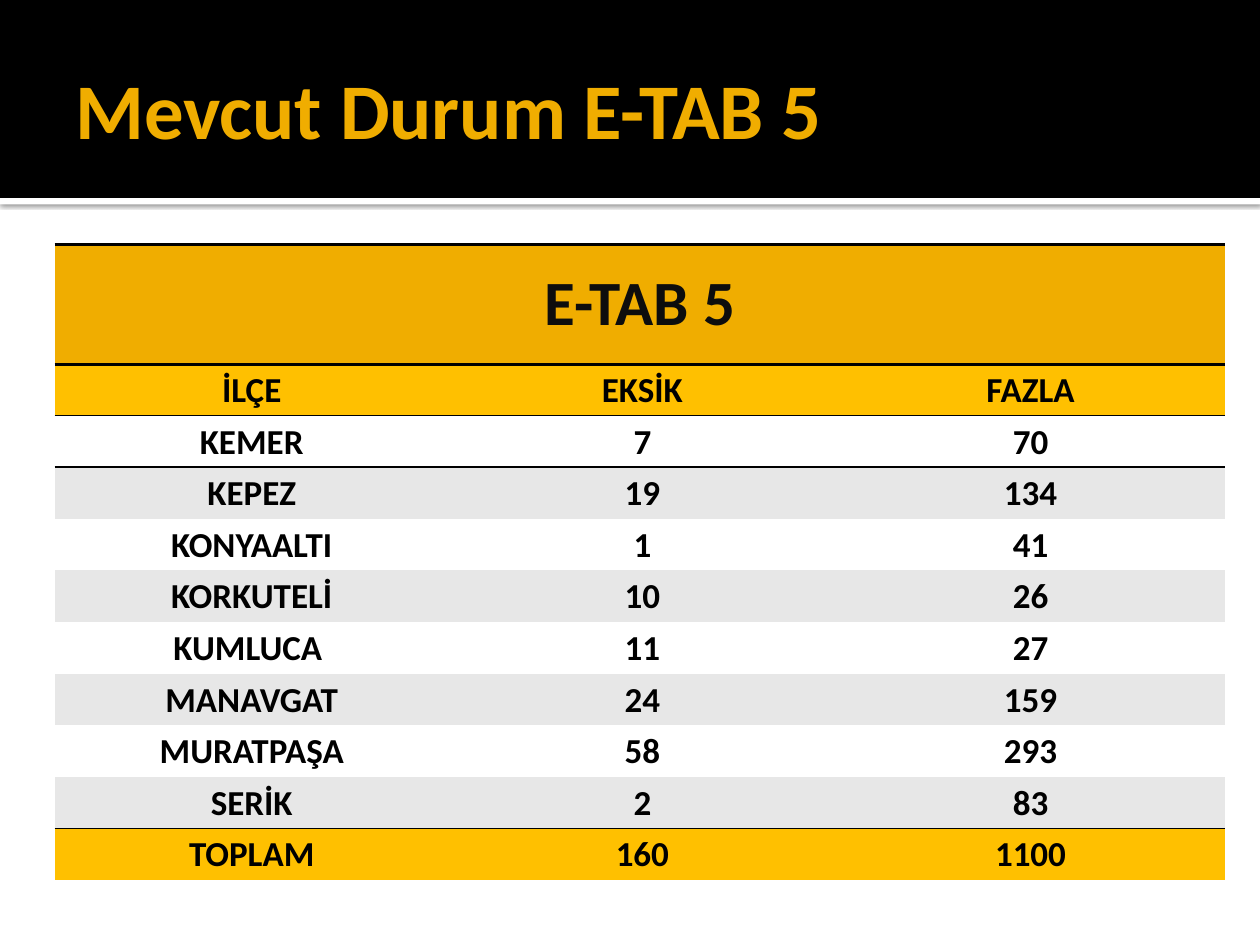
from dataclasses import dataclass

from lxml import etree
from pptx import Presentation
from pptx.dml.color import RGBColor
from pptx.enum import shapes, text
from pptx.oxml import ns
from pptx.util import Cm, Pt


@dataclass(frozen=True)
class Theme:
    font: str = "Calibri"
    black: str = "000000"
    white: str = "FFFFFF"
    gold: str = "F0AD00"
    amber: str = "FFC000"
    grey: str = "E7E7E7"
    caption_ink: str = "0D0D0D"
    title_size: int = 45
    caption_size: int = 36
    body_size: int = 20


THEME = Theme()
PLAIN_TABLE = "{2D5ABB26-0587-4C30-8999-92F81FD0307C}"
COLUMN_WIDTHS = (7.95, 7.8, 7.85)
CAPTION_HEIGHT, ROW_HEIGHT = 2.41, 1.04
HEADER = ("İLÇE", "EKSİK", "FAZLA")
DISTRICTS = [
    ("KEMER", 7, 70),
    ("KEPEZ", 19, 134),
    ("KONYAALTI", 1, 41),
    ("KORKUTELİ", 10, 26),
    ("KUMLUCA ", 11, 27),
    ("MANAVGAT", 24, 159),
    ("MURATPAŞA", 58, 293),
    ("SERİK", 2, 83),
]
TOTAL = ("TOPLAM", 160, 1100)


def set_attributes(target, values):
    for name, value in values.items():
        setattr(target, name, value)


def add_element(parent, tag, **attributes):
    values = {name: str(value) for name, value in attributes.items()}
    return etree.SubElement(parent, ns.qn(tag), values)


def write_text(tf, words, size, color, align):
    p = tf.paragraphs[0]
    p.alignment = align
    r = p.add_run()
    r.text = str(words)
    set_attributes(r.font, {"name": THEME.font, "size": Pt(size), "bold": True})
    r.font.color.rgb = RGBColor.from_string(color)


def add_band(s, order, top, height, color):
    """Add a full-width band behind the title."""
    sp = s.shapes.add_shape(shapes.MSO_SHAPE.RECTANGLE, 0, Cm(top), Cm(25.4), Cm(height))
    sp.shadow.inherit = False
    sp.fill.solid()
    sp.fill.fore_color.rgb = RGBColor.from_string(color)
    sp.line.fill.background()
    s.shapes._spTree.insert(2 + order, sp._element)
    return sp


def add_shadow(sp):
    effects = sp._element.spPr.find(ns.qn("a:effectLst"))
    shadow = add_element(effects, "a:outerShdw", blurRad=Pt(2.5), dist=Pt(0.8),
                         dir=90 * 60000, algn="t", rotWithShape=0)
    color = add_element(shadow, "a:srgbClr", val=THEME.black)
    add_element(color, "a:alpha", val=60000)


def format_title(s, words):
    sp = s.shapes.title
    set_attributes(sp, {"left": Cm(1.27), "top": Cm(0.43),
                        "width": Cm(22.86), "height": Cm(3.48)})
    tf = sp.text_frame
    set_attributes(tf, {
        "margin_left": Cm(0.25), "margin_right": Cm(0.13),
        "margin_top": Cm(0.13), "margin_bottom": Cm(0.13),
        "vertical_anchor": text.MSO_ANCHOR.MIDDLE,
        "auto_size": text.MSO_AUTO_SIZE.NONE, "word_wrap": True,
    })
    write_text(tf, words, THEME.title_size, THEME.gold, text.PP_ALIGN.LEFT)


def add_border(cell, side, width):
    line = add_element(cell._tc.get_or_add_tcPr(), f"a:ln{side}", w=Pt(width))
    fill = add_element(line, "a:solidFill")
    add_element(fill, "a:srgbClr", val=THEME.black)


def format_cell(cell, fill, borders):
    """Draw borders ({side: points}, top before bottom), then the fill."""
    for side, width in borders.items():
        add_border(cell, side, width)
    cell.fill.solid()
    cell.fill.fore_color.rgb = RGBColor.from_string(fill)
    cell.vertical_anchor = text.MSO_ANCHOR.MIDDLE


def fill_row(table, index, values, fill, borders):
    for column, value in enumerate(values):
        cell = table.cell(index, column)
        format_cell(cell, fill, borders)
        set_attributes(cell, {"margin_left": Cm(0.03), "margin_right": Cm(0.03),
                              "margin_top": Cm(0.03), "margin_bottom": 0})
        write_text(cell.text_frame, value, THEME.body_size, THEME.black,
                   text.PP_ALIGN.CENTER)


def fill_caption(table, words):
    for cell in table.rows[0].cells:
        format_cell(cell, THEME.gold, {"T": 2, "B": 2})
    caption = table.cell(0, 0)
    caption.merge(table.cell(0, len(HEADER) - 1))
    write_text(caption.text_frame, words, THEME.caption_size, THEME.caption_ink,
               text.PP_ALIGN.CENTER)


def add_district_table(s):
    row_count = len(DISTRICTS) + 3
    height = CAPTION_HEIGHT + ROW_HEIGHT * (row_count - 1)
    table = s.shapes.add_table(row_count, len(HEADER), Cm(1.1), Cm(4.93),
                               Cm(sum(COLUMN_WIDTHS)), Cm(height)).table
    set_attributes(table, {"first_row": False, "horz_banding": False})
    table._tbl.tblPr.find(ns.qn("a:tableStyleId")).text = PLAIN_TABLE
    for column, width in zip(table.columns, COLUMN_WIDTHS):
        column.width = Cm(width)
    for index, row in enumerate(table.rows):
        row.height = Cm(ROW_HEIGHT if index else CAPTION_HEIGHT)

    fill_caption(table, "E-TAB 5")
    fill_row(table, 1, HEADER, THEME.amber, {"T": 2, "B": 1})
    borders = {0: {"T": 1, "B": 1.5}, len(DISTRICTS) - 1: {"B": 1}}
    for index, district in enumerate(DISTRICTS):
        fill = THEME.grey if index % 2 else THEME.white
        fill_row(table, index + 2, district, fill, borders.get(index, {}))
    fill_row(table, row_count - 1, TOTAL, THEME.amber, {"T": 1})


def main():
    prs = Presentation()
    set_attributes(prs, {"slide_width": Cm(25.4), "slide_height": Cm(19.05)})
    s = prs.slides.add_slide(prs.slide_layouts[5])
    add_shadow(add_band(s, 0, 3.99, 0.13, THEME.white))
    add_band(s, 1, 0, 3.99, THEME.black)
    format_title(s, "Mevcut Durum E-TAB 5")
    add_district_table(s)
    prs.save("out.pptx")


if __name__ == "__main__":
    main()
